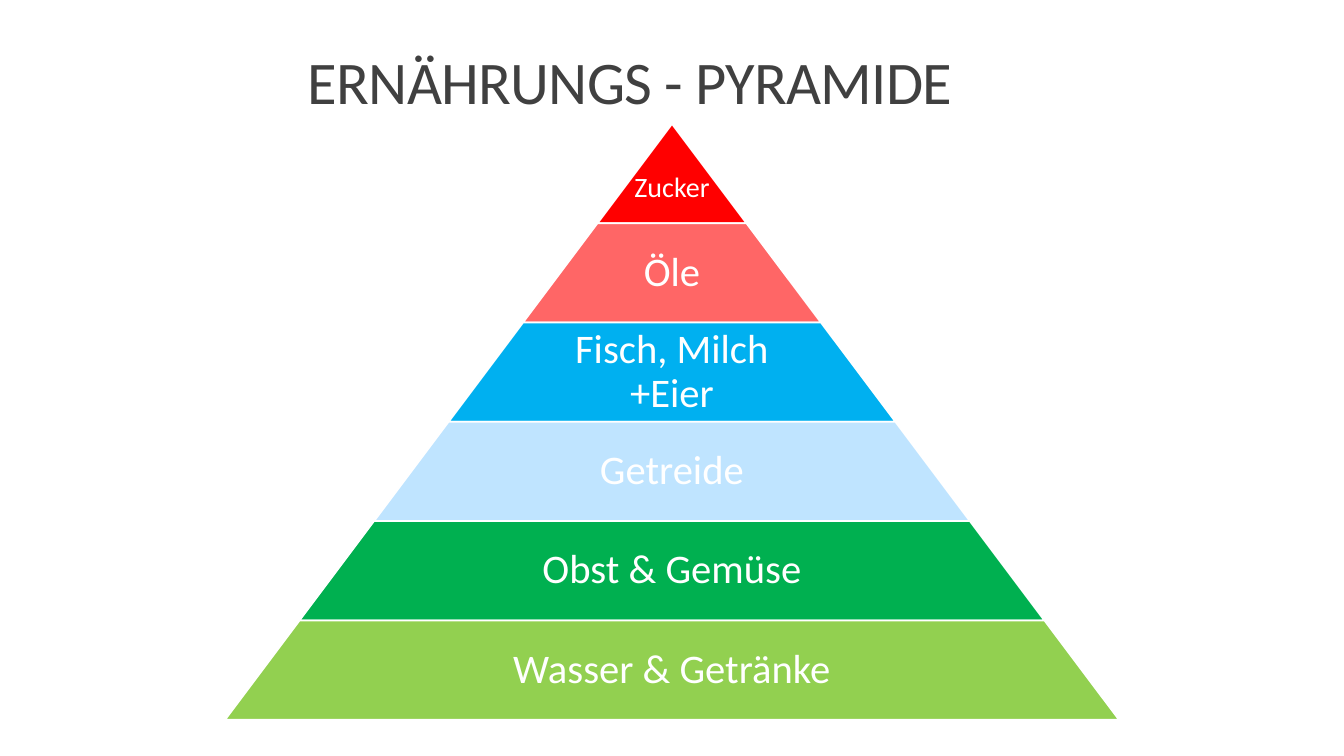
from dataclasses import dataclass

from pptx import Presentation
from pptx.dml.color import RGBColor
from pptx.enum.shapes import MSO_SHAPE as Preset
from pptx.enum.text import MSO_ANCHOR as Anchor, PP_ALIGN as Align
from pptx.slide import Slide
from pptx.text.text import _Run as Run
from pptx.util import Inches, Pt

FONT = "Calibri"
WHITE = RGBColor(0xFF, 0xFF, 0xFF)
DARK_GREY = RGBColor(0x40, 0x40, 0x40)
RED = RGBColor(0xFF, 0x00, 0x00)
SALMON = RGBColor(0xFF, 0x66, 0x66)
BLUE = RGBColor(0x00, 0xB0, 0xF0)
PALE_BLUE = RGBColor(0xBF, 0xE4, 0xFF)
GREEN = RGBColor(0x00, 0xB0, 0x50)
LIGHT_GREEN = RGBColor(0x92, 0xD0, 0x50)

SLIDE_WIDTH, SLIDE_HEIGHT = Inches(13.33), Inches(7.5)
PYRAMID_TOP = Inches(1.23)
ROW = Inches(5.91) // 6
SLOPE = 0.75  # horizontal run of each side per unit of height
LABEL_SHARE = 0.65


@dataclass(frozen=True)
class Box:
    left: int
    top: int
    width: int
    height: int

    def as_args(self) -> tuple[int, int, int, int]:
        return self.left, self.top, self.width, self.height


@dataclass(frozen=True)
class Level:
    label: str
    fill: RGBColor
    font_size: float = 29
    label_share: float = LABEL_SHARE
    label_drop: float = 0  # share of a row


LEVELS = [
    Level("Zucker", RED, font_size=20, label_share=1, label_drop=0.15),
    Level("Öle", SALMON),
    Level("Fisch, Milch +Eier", BLUE),
    Level("Getreide", PALE_BLUE),
    Level("Obst & Gemüse", GREEN),
    Level("Wasser & Getränke", LIGHT_GREEN),
]


def centred_box(top: int, width: int) -> Box:
    return Box((SLIDE_WIDTH - width) // 2, top, width, ROW)


def add_text(slide: Slide, box: Box, text: str, size: float, color: RGBColor,
             line_spacing: float, anchor: Anchor, side_inset: int = 0) -> Run:
    frame = slide.shapes.add_textbox(*box.as_args()).text_frame
    frame.word_wrap = True
    frame.vertical_anchor = anchor
    frame.margin_left = frame.margin_right = side_inset
    frame.margin_top = frame.margin_bottom = 0
    paragraph = frame.paragraphs[0]
    paragraph.alignment = Align.CENTER
    paragraph.line_spacing = line_spacing
    run = paragraph.add_run()
    run.text = text
    run.font.name = FONT
    run.font.size = Pt(size)
    run.font.color.rgb = color
    return run


def add_title(slide: Slide) -> None:
    box = Box(Inches(2.82), Inches(0.54), Inches(6.86), Inches(0.62))
    run = add_text(slide, box, "ERNÄHRUNGS - PYRAMIDE", 43.2, DARK_GREY,
                   0.85, Anchor.BOTTOM)
    run.font._element.set("spc", "-50")


def add_level(slide: Slide, level: Level, row: int) -> None:
    top = PYRAMID_TOP + row * ROW
    width = int(2 * SLOPE * ROW * (row + 1))
    band = slide.shapes.add_shape(Preset.TRAPEZOID,
                                  *centred_box(top, width).as_args())
    band.adjustments[0] = SLOPE
    band.shadow.inherit = False
    band.fill.solid()
    band.fill.fore_color.rgb = level.fill
    band.line.color.rgb = WHITE
    band.line.width = Pt(1.25)

    label_box = centred_box(top + int(level.label_drop * ROW),
                            int(width * level.label_share))
    add_text(slide, label_box, level.label, level.font_size, WHITE,
             0.9, Anchor.MIDDLE, side_inset=Inches(0.1))


def main() -> None:
    presentation = Presentation()
    presentation.slide_width = SLIDE_WIDTH
    presentation.slide_height = SLIDE_HEIGHT
    slide = presentation.slides.add_slide(presentation.slide_layouts[6])
    add_title(slide)
    for row, level in enumerate(LEVELS):
        add_level(slide, level, row)
    presentation.save("out.pptx")


if __name__ == "__main__":
    main()
